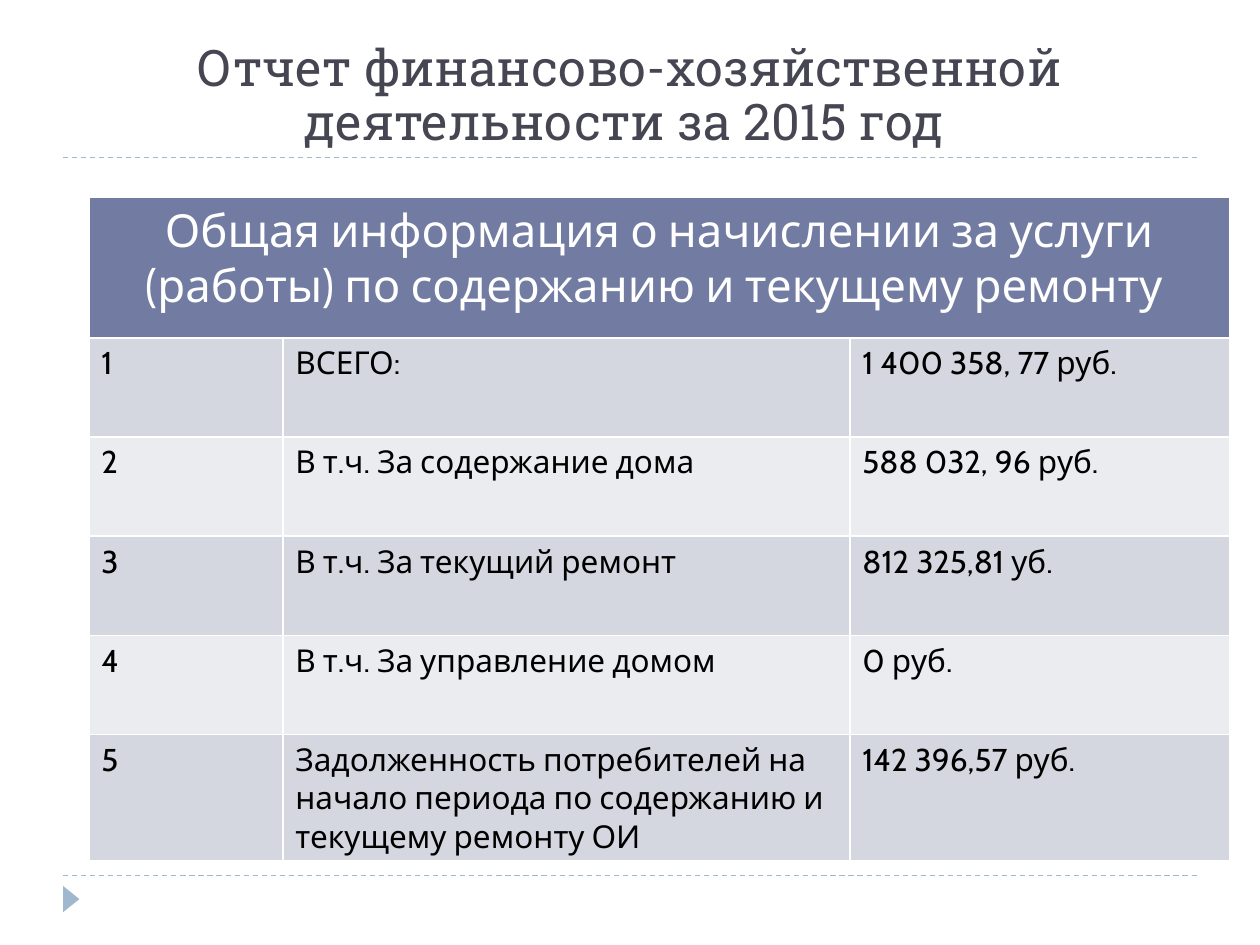
import pptx
import pptx.dml.color
import pptx.enum.dml
import pptx.enum.shapes
import pptx.enum.text
import pptx.oxml
import pptx.oxml.ns
import pptx.util

Cm = pptx.util.Cm
Pt = pptx.util.Pt
RGBColor = pptx.dml.color.RGBColor
Align = pptx.enum.text.PP_ALIGN

TITLE = "Отчет финансово-хозяйственной деятельности за 2015 год "
HEADER = ("Общая информация о начислении за услуги (работы) "
          "по содержанию и текущему ремонту ")
ROWS = [
    ("1", "ВСЕГО:", "1 400 358, 77 руб."),
    ("2", "В т.ч. За содержание дома", "588 032, 96 руб."),
    ("3", "В т.ч. За текущий ремонт", "812 325,81 уб."),
    ("4", "В т.ч. За управление домом", "0 руб."),
    ("5", "Задолженность потребителей на начало периода по содержанию "
          "и текущему ремонту ОИ", "142 396,57 руб."),
]
COLUMN_WIDTHS = [3.91, 11.43, 7.67]
HEADER_HEIGHT, ROW_HEIGHT = 2.83, 2.0
RULE_HEIGHTS = [3.18, 17.65]

WHITE = RGBColor(0xFF, 0xFF, 0xFF)
BLACK = RGBColor(0, 0, 0)
SLATE = RGBColor(0x46, 0x46, 0x53)
ACCENT = RGBColor(0x9F, 0xB8, 0xCD)
HEADER_FILL = RGBColor(0x72, 0x7C, 0xA3)
BAND_FILLS = [RGBColor(0xD5, 0xD7, 0xE0), RGBColor(0xEB, 0xEC, 0xF0)]


def write_text(frame, text, font="Cabin", size=18, color=BLACK,
               align=Align.LEFT, line_spacing=None):
    paragraph = frame.paragraphs[0]
    paragraph.alignment = align
    paragraph.line_spacing = line_spacing
    run = paragraph.add_run()
    run.text = text
    run.font.name = font
    run.font.size = Pt(size)
    run.font.color.rgb = color


def style_cell(cell, fill):
    """Give the cell thin white borders and a solid fill."""
    properties = cell._tc.get_or_add_tcPr()
    for side in "LRTB":
        properties.append(pptx.oxml.parse_xml(
            f'<a:ln{side} {pptx.oxml.ns.nsdecls("a")} w="{Pt(1)}"><a:solidFill>'
            f'<a:srgbClr val="{WHITE}"/></a:solidFill></a:ln{side}>'))
    cell.fill.solid()
    cell.fill.fore_color.rgb = fill


def add_rule(slide, top):
    rule = slide.shapes.add_connector(
        pptx.enum.shapes.MSO_CONNECTOR.STRAIGHT,
        Cm(1.27), Cm(top), Cm(24.13), Cm(top))
    rule.line.color.rgb = ACCENT
    rule.line.width = Pt(0.75)
    rule.line.dash_style = pptx.enum.dml.MSO_LINE.DASH
    rule._element.spPr.append(pptx.oxml.parse_xml(
        f'<a:effectLst {pptx.oxml.ns.nsdecls("a")}/>'))


def add_marker(slide):
    marker = slide.shapes.add_shape(
        pptx.enum.shapes.MSO_SHAPE.ISOSCELES_TRIANGLE,
        Cm(1.17), Cm(17.96), Cm(0.53), Cm(0.33))
    marker.rotation = 90
    marker.shadow.inherit = False
    marker.fill.solid()
    marker.fill.fore_color.rgb = ACCENT
    marker.line.fill.background()


def add_title(slide):
    box = slide.shapes.add_textbox(Cm(1.27), Cm(0.64), Cm(22.86), Cm(2.54))
    box.text_frame.word_wrap = True
    box.text_frame.vertical_anchor = pptx.enum.text.MSO_ANCHOR.BOTTOM
    write_text(box.text_frame, TITLE, font="Roboto Slab", size=28.8,
               color=SLATE, align=Align.CENTER, line_spacing=0.9)


def add_report_table(slide):
    height = HEADER_HEIGHT + ROW_HEIGHT * len(ROWS)
    table = slide.shapes.add_table(
        len(ROWS) + 1, len(COLUMN_WIDTHS), Cm(1.79), Cm(3.98),
        Cm(sum(COLUMN_WIDTHS)), Cm(height)).table
    for column, width in zip(table.columns, COLUMN_WIDTHS):
        column.width = Cm(width)
    for row in table.rows:
        row.height = Cm(ROW_HEIGHT)
    table.rows[0].height = Cm(HEADER_HEIGHT)

    header = table.cell(0, 0)
    header.merge(table.cell(0, len(COLUMN_WIDTHS) - 1))
    style_cell(header, HEADER_FILL)
    write_text(header.text_frame, HEADER, size=26, color=WHITE,
               align=Align.CENTER)
    for row_index, values in enumerate(ROWS):
        for column_index, value in enumerate(values):
            cell = table.cell(row_index + 1, column_index)
            style_cell(cell, BAND_FILLS[row_index % 2])
            write_text(cell.text_frame, value)


def main():
    presentation = pptx.Presentation()
    presentation.slide_width, presentation.slide_height = Cm(25.4), Cm(19.05)
    slide = presentation.slides.add_slide(presentation.slide_layouts[6])
    for top in RULE_HEIGHTS:
        add_rule(slide, top)
    add_marker(slide)
    add_title(slide)
    add_report_table(slide)
    presentation.save("out.pptx")


if __name__ == "__main__":
    main()
